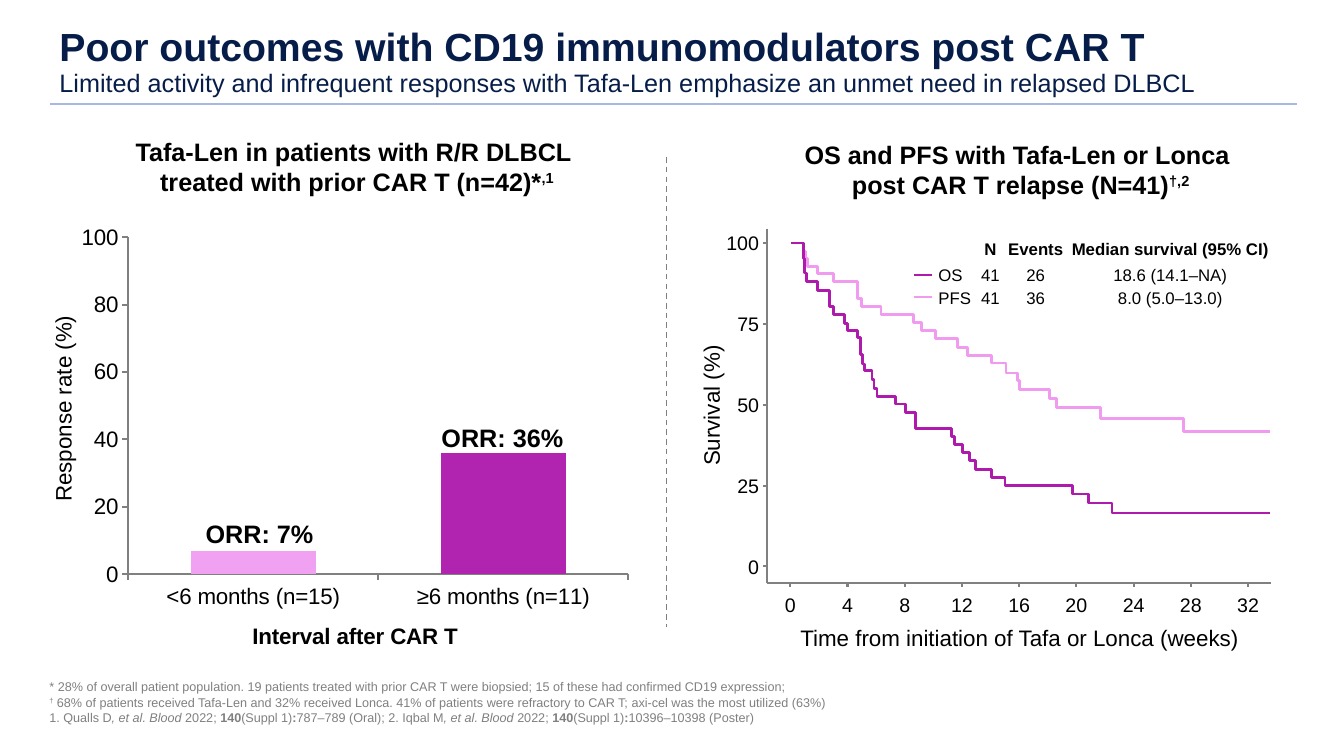
import lxml.etree
import pptx
import pptx.chart.data
import pptx.dml.color
import pptx.enum.chart
import pptx.enum.dml
import pptx.enum.shapes
import pptx.enum.text
import pptx.oxml
import pptx.oxml.ns
import pptx.util

Pt = pptx.util.Pt
RGB = pptx.dml.color.RGBColor
ALIGN = pptx.enum.text.PP_ALIGN
ANCHOR = pptx.enum.text.MSO_ANCHOR
qn = pptx.oxml.ns.qn

NAVY = RGB(0x07, 0x1D, 0x49)
RULE = RGB(0xA8, 0xB8, 0xE0)
BLACK = RGB(0, 0, 0)
WHITE = RGB(0xFF, 0xFF, 0xFF)
GREY = RGB(0x80, 0x80, 0x80)
DIVIDER = RGB(0x7F, 0x7F, 0x7F)
PURPLE = RGB(0xAD, 0x1A, 0xAC)
PINK = RGB(0xF0, 0x9A, 0xF0)
BAR_PINK = RGB(0xF1, 0xA1, 0xF1)
BAR_PURPLE = RGB(0xB1, 0x24, 0xB0)

# Each pair is a week and the survival (%) from that week on
OS_STEPS = [
    (0.07, 100), (0.92, 95.3), (0.99, 90.7), (1.13, 88.2), (1.9, 85.4), (2.75, 80.4),
    (3.03, 77.9), (3.81, 75.1), (4.02, 72.9), (4.72, 70.7), (4.93, 65.4), (5.07, 62.6),
    (5.21, 60.7), (5.71, 57.9), (5.85, 55.1), (6.06, 52.6), (7.33, 50.2), (8.03, 47.7),
    (8.74, 42.7), (11.28, 40.2), (11.49, 37.7), (12.05, 35.2), (12.54, 32.7),
    (12.97, 29.9), (14.09, 27.4), (15.01, 24.9), (19.73, 22.4), (20.86, 19.6), (22.48, 16.5)]
PFS_STEPS = [
    (0.92, 97.5), (1.06, 95.3), (1.2, 92.8), (1.9, 90.7), (3.03, 88.2), (4.72, 82.9),
    (5, 80.4), (6.34, 77.9), (8.6, 75.4), (9.16, 72.9), (10.15, 70.4), (11.7, 67.6),
    (12.4, 65.1), (14.09, 62.9), (15.08, 59.8), (15.86, 57.6), (16, 54.8), (18.11, 52),
    (18.6, 49.2), (21.7, 45.8), (27.48, 41.7)]
LAST_WEEK = 33.5


def add_runs(p, parts):
    """Each part is its text and its marks: b bold, i italic, ^ superscript."""
    for text, marks in parts:
        for n, line in enumerate(text.split("\n")):
            if n:
                p.add_line_break()
            if line:
                r = p.add_run()
                r.text = line
                if "b" in marks:
                    r.font.bold = True
                if "i" in marks:
                    r.font.italic = True
                if "^" in marks:
                    r._r.get_or_add_rPr().set("baseline", "30000")


def set_font(font, size, color=BLACK, bold=False):
    font.name, font.size, font.bold = "Arial", Pt(size), bold
    font.color.rgb = color


def add_text(s, box, paragraphs, size, color=BLACK, bold=False, align=ALIGN.CENTER,
             anchor=ANCHOR.TOP, tight=False, wrap=True, rotation=0, fill=None):
    """paragraphs is a string or a list of lists of parts."""
    frame = [Pt(v) for v in box]
    if fill is None:
        sp = s.shapes.add_textbox(*frame)
    else:
        sp = s.shapes.add_shape(pptx.enum.shapes.MSO_SHAPE.RECTANGLE, *frame)
        sp.shadow.inherit = False
        sp.fill.solid()
        sp.fill.fore_color.rgb = fill
        sp.line.fill.background()
    sp.rotation = rotation
    tf = sp.text_frame
    tf.word_wrap, tf.vertical_anchor = wrap, anchor
    if tight:
        tf.margin_left = tf.margin_top = tf.margin_right = tf.margin_bottom = 0
    if isinstance(paragraphs, str):
        paragraphs = [[(paragraphs, "")]]
    for n, parts in enumerate(paragraphs):
        p = tf.add_paragraph() if n else tf.paragraphs[0]
        p.alignment = align
        set_font(p.font, size, color, bold)
        add_runs(p, parts)


def add_line(s, x1, y1, x2, y2, color=GREY, width=1.5, dash=None):
    cx = s.shapes.add_connector(pptx.enum.shapes.MSO_CONNECTOR.STRAIGHT,
                                Pt(x1), Pt(y1), Pt(x2), Pt(y2))
    cx.line.color.rgb, cx.line.width = color, Pt(width)
    if dash:
        cx.line.dash_style = dash
    lxml.etree.SubElement(cx._element.spPr, qn("a:effectLst"))


def add_header(s, x, y, w, h):
    add_line(s, x + 0.7, y + h + 0.8, x + w, y + h + 0.8, RULE, 1.1)
    sp = s.shapes.title
    sp.left, sp.top, sp.width, sp.height = Pt(x), Pt(y), Pt(w), Pt(h)
    tf = sp.text_frame
    tf.auto_size = pptx.enum.text.MSO_AUTO_SIZE.NONE
    tf.word_wrap, tf.vertical_anchor = True, ANCHOR.BOTTOM
    p = tf.paragraphs[0]
    p.alignment, p.line_spacing = ALIGN.LEFT, 0.9
    add_runs(p, [("Poor outcomes with CD19 immunomodulators post CAR T\n", ""),
                 ("Limited activity and infrequent responses with Tafa-Len "
                  "emphasize an unmet need in relapsed DLBCL", "")])
    set_font(p.runs[0].font, 28, NAVY, True)
    set_font(p.runs[1].font, 18, NAVY)


def add_response_panel(s, x, y, w):
    # Bar chart
    data = pptx.chart.data.CategoryChartData()
    data.categories = ["<6 months (n=15)", "≥6 months (n=11)"]
    data.add_series("Series 1", (7, 36))
    ch = s.shapes.add_chart(pptx.enum.chart.XL_CHART_TYPE.COLUMN_STACKED, Pt(x + 28.3),
                            Pt(y + 61.3), Pt(391.7), Pt(326.2), data).chart
    ch.has_legend = ch.has_title = False
    set_font(ch.font, 16)
    plot = ch.plots[0]
    plot.gap_width, plot.overlap, plot.vary_by_categories = 100, 100, False
    for n, color in enumerate((BAR_PINK, BAR_PURPLE)):
        fill = plot.series[0].points[n].format.fill
        fill.solid()
        fill.fore_color.rgb = color
    for axis in (ch.category_axis, ch.value_axis):
        axis.has_major_gridlines = False
        axis.major_tick_mark = pptx.enum.chart.XL_TICK_MARK.OUTSIDE
        axis.format.line.color.rgb, axis.format.line.width = GREY, Pt(1.5)
    va = ch.value_axis
    va.minimum_scale, va.maximum_scale, va.major_unit = 0, 100, 20
    va.tick_labels.number_format, va.tick_labels.number_format_is_linked = "0", False
    p = ch.category_axis.axis_title.text_frame.paragraphs[0]
    set_font(p.font, 16, bold=True)
    add_runs(p, [("Interval after CAR T", "")])

    # Plot area inside the chart
    area = ch._chartSpace.find(".//" + qn("c:plotArea"))
    layout = area.find(qn("c:layout"))
    if layout is None:
        layout = lxml.etree.Element(qn("c:layout"))
        area.insert(0, layout)
    manual = lxml.etree.SubElement(layout, qn("c:manualLayout"))
    for tag, val in (("layoutTarget", "inner"), ("xMode", "edge"), ("yMode", "edge"),
                     ("x", "0.083"), ("y", "0.045"), ("w", "0.914"), ("h", "0.738")):
        lxml.etree.SubElement(manual, qn("c:" + tag)).set("val", val)

    # Labels
    add_text(s, (x - 81.1, y + 184.4, 193.7, 28.1), "Response rate (%)", 16, rotation=270)
    add_text(s, (x, y, w, 57.6),
             [[("Tafa-Len in patients with R/R DLBCL \ntreated with prior CAR T (n=42)*", ""),
               (",1", "^")]], 18, bold=True)
    for label, dx, dy in (("ORR: 36%", 271.3, 204.6), ("ORR: 7%", 97.8, 273)):
        add_text(s, (x + dx, y + dy, 115.2, 31.7), label, 18, bold=True)


def add_survival_panel(s, x, y, w):
    axis_x, axis_y = x + 29.9, y + 320.4

    def week_x(week):
        return x + 46.5 + 10.22 * week

    def survival_y(percent):
        return y + 308.8 - 2.31 * percent

    def add_curve(steps, color):
        points, level = [], steps[0][1]
        for week, survival in steps:
            points += [(week, level), (week, survival)]
            level = survival
        points.append((LAST_WEEK, level))
        points = [(Pt(week_x(a)), Pt(survival_y(b))) for a, b in points[1:]]
        fb = s.shapes.build_freeform(*points[0])
        fb.add_line_segments(points[1:], close=False)
        sp = fb.convert_to_shape()
        sp.shadow.inherit = False
        sp.fill.background()
        sp.line.color.rgb, sp.line.width = color, Pt(2)

    # Headings
    add_text(s, (x + 31.4, y, 359.3, 56.2),
             [[("OS and PFS with Tafa-Len or Lonca \npost CAR T relapse (N=41)", ""),
               ("†,2", "^")]], 18, bold=True)
    add_text(s, (x - 119.8, y + 180.7, 219.6, 26.6), "Survival (%)", 16, rotation=270)
    add_text(s, (x + 44.3, y + 346.3, 331.9, 29.5),
             "Time from initiation of Tafa or Lonca (weeks)", 16, fill=WHITE)

    # Axes with ticks
    add_line(s, axis_x, y + 67.6, axis_x, axis_y)
    add_line(s, axis_x, axis_y, x + w, axis_y)
    for percent in range(0, 101, 25):
        ty = survival_y(percent)
        add_line(s, axis_x - 3, ty, axis_x - 0.7, ty)
        add_text(s, (axis_x - 29.7, ty - 9.3, 24, 18.7), str(percent), 14,
                 align=ALIGN.RIGHT, anchor=ANCHOR.MIDDLE, tight=True)
    for week in range(0, 33, 4):
        tx = week_x(week)
        add_line(s, tx, axis_y + 0.7, tx, axis_y + 3)
        add_text(s, (tx - 9.4, axis_y + 6.4, 18.8, 18.7), str(week), 14,
                 anchor=ANCHOR.MIDDLE, tight=True)

    # Survival curves
    add_curve(PFS_STEPS, PINK)
    add_curve(OS_STEPS, PURPLE)

    # Legend
    columns = ((189.4, 14), (221.8, 40), (317.9, 142))
    rows = ((74.1, None, None, ("N", "Events", "Median survival (95% CI)")),
            (92.8, "OS", PURPLE, ("41", "26", "18.6 (14.1–NA)")),
            (108.7, "PFS", PINK, ("41", "36", "8.0 (5.0–13.0)")))
    for top, name, color, cells in rows:
        if name:
            add_line(s, x + 135, y + top + 7.9, x + 148, y + top + 7.9, color)
            add_text(s, (x + 152.3, y + top, 24, 15.8), name, 12, align=ALIGN.LEFT,
                     anchor=ANCHOR.MIDDLE, tight=True, wrap=False)
        for (center, width), cell in zip(columns, cells):
            add_text(s, (x + center - width / 2, y + top, width, 15.8), cell, 12,
                     bold=not name, anchor=ANCHOR.MIDDLE, tight=True, wrap=False)


def add_footnotes(s, x, y, w, h):
    journal = [(", et al. Blood ", "i"), ("2022; ", ""), ("140", "b"),
               ("(Suppl 1)", ""), (":", "b")]
    notes = [("* 28% of overall patient population. 19 patients treated with prior CAR T "
              "were biopsied; 15 of these had confirmed CD19 expression;\n", ""),
             ("†", "^"),
             (" 68% of patients received Tafa-Len and 32% received Lonca. 41% of patients "
              "were refractory to CAR T; axi-cel was the most utilized (63%)", "")]
    references = [("1. Qualls D", ""), *journal, ("787–789 (Oral); 2. Iqbal M", ""),
                  *journal, ("10396–10398 (Poster)", "")]
    add_text(s, (x, y, w, h), [notes, references], 9, GREY, align=ALIGN.LEFT,
             anchor=ANCHOR.BOTTOM, tight=True, wrap=False)


def main():
    prs = pptx.Presentation()
    prs.slide_width, prs.slide_height = Pt(960), Pt(540)
    s = prs.slides.add_slide(prs.slide_layouts[5])
    add_header(s, 35.3, 23, 891, 50.4)
    add_response_panel(s, 30, 93.5, 450)
    add_line(s, 476, 112.3, 476, 447.8, DIVIDER, 1, pptx.enum.dml.MSO_LINE.DASH)
    add_survival_panel(s, 518, 95.8, 390)
    add_footnotes(s, 35.3, 485.3, 562.3, 32.4)
    prs.save("out.pptx")


if __name__ == "__main__":
    main()
